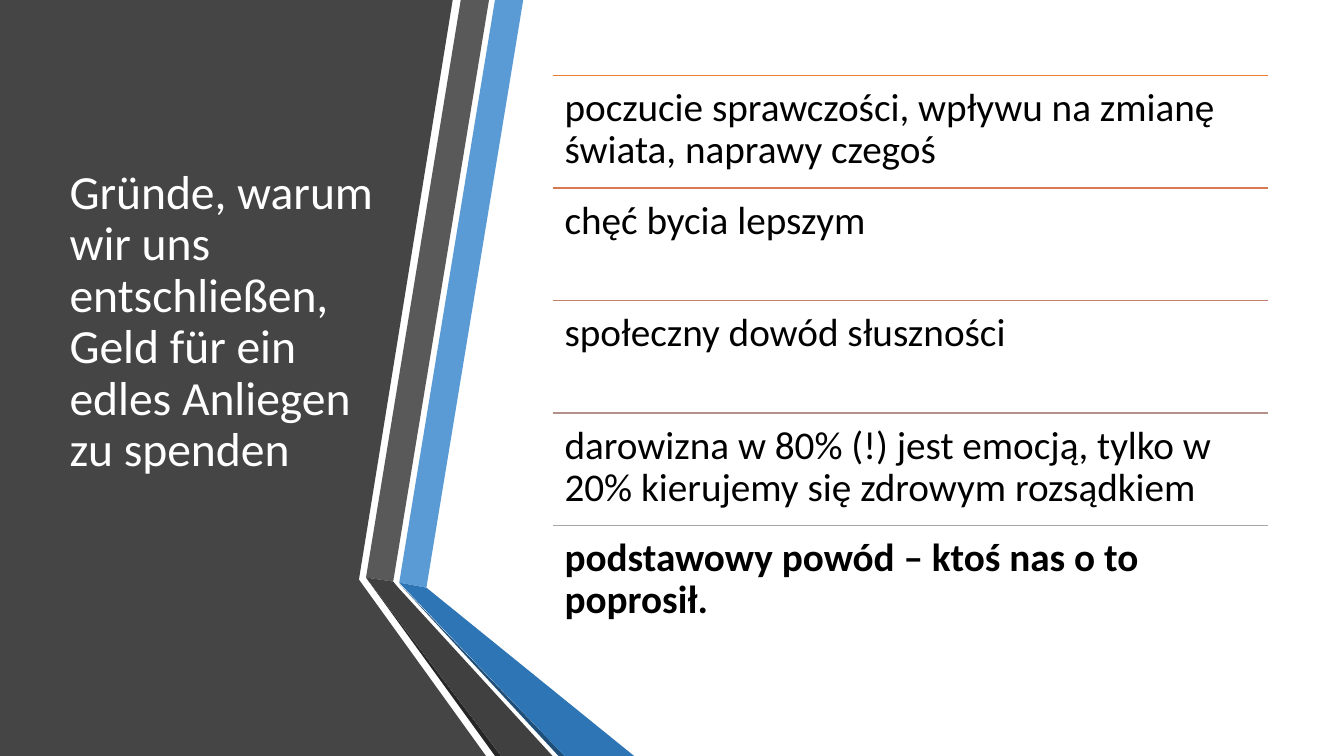
"""Build a slide with a folded-ribbon title panel and a ruled list of reasons."""
from dataclasses import dataclass

from lxml import etree
from pptx import Presentation
from pptx import util as u
from pptx.dml.color import RGBColor
from pptx.enum import shapes, text
from pptx.oxml.ns import qn
from pptx.slide import Slide
from pptx.text.text import TextFrame

FONT = "Calibri"
WHITE = RGBColor(0xFF, 0xFF, 0xFF)
BLACK = RGBColor(0x00, 0x00, 0x00)
PANEL_GRAY = RGBColor(0x45, 0x45, 0x45)
RIBBON_BLUE = RGBColor(0x5B, 0x9B, 0xD5)
RIBBON_GRAY = RGBColor(0x59, 0x59, 0x59)
EDGE_GRAY = RGBColor(0x26, 0x26, 0x26)
EDGE_BLUE = RGBColor(0x1F, 0x4E, 0x79)
FOLD_BLUE = RGBColor(0x2E, 0x75, 0xB6)
FOLD_GRAY = RGBColor(0x40, 0x40, 0x40)
RULE_ORANGE = RGBColor(0xED, 0x7D, 0x31)
RULE_COPPER = RGBColor(0xD8, 0x7A, 0x51)
RULE_ROSE = RGBColor(0xC4, 0x81, 0x70)
RULE_MAUVE = RGBColor(0xB4, 0x90, 0x8B)
RULE_GRAY = RGBColor(0xA5, 0xA5, 0xA5)

LIST_LEFT, LIST_TOP, LIST_WIDTH, LIST_HEIGHT = 5.48, 0.75, 7.1, 5.58
LIST_INSET = 0.12


@dataclass(frozen=True)
class Facet:
    color: RGBColor
    points: tuple[tuple[float, float], ...]


@dataclass(frozen=True)
class Reason:
    wording: str
    rule_color: RGBColor
    bold: bool = False


FACETS = (
    Facet(PANEL_GRAY, ((0, 0), (4.49, 0), (3.56, 5.75), (4.82, 7.5), (0, 7.5))),
    Facet(RIBBON_BLUE, ((3.96, 5.78), (4.23, 5.83), (5.19, 0), (4.91, 0))),
    Facet(RIBBON_GRAY, ((4.85, 0), (4.57, 0), (3.63, 5.73), (3.9, 5.77))),
    Facet(EDGE_GRAY, ((3.63, 5.73), (4.91, 7.5), (4.97, 7.5))),
    Facet(EDGE_BLUE, ((3.96, 5.79), (5.54, 7.5), (5.6, 7.5))),
    Facet(FOLD_BLUE, ((3.96, 5.78), (5.6, 7.5), (6.29, 7.5), (4.23, 5.83))),
    Facet(FOLD_GRAY, ((5.48, 7.5), (3.95, 5.83), (3.9, 5.77), (3.63, 5.73), (4.97, 7.5))),
)

REASONS = (
    Reason("poczucie sprawczości, wpływu na zmianę świata, naprawy czegoś", RULE_ORANGE),
    Reason("chęć bycia lepszym", RULE_COPPER),
    Reason("społeczny dowód słuszności", RULE_ROSE),
    Reason("darowizna w 80% (!) jest emocją, tylko w 20% kierujemy się zdrowym rozsądkiem", RULE_MAUVE),
    Reason("podstawowy powód – ktoś nas o to poprosił.", RULE_GRAY, bold=True),
)


def write_text(frame: TextFrame, wording: str, size: int, color: RGBColor, bold: bool = False) -> None:
    frame.word_wrap = True
    frame.auto_size = text.MSO_AUTO_SIZE.NONE
    paragraph = frame.paragraphs[0]
    paragraph.text = wording
    paragraph.alignment = text.PP_ALIGN.LEFT
    paragraph.line_spacing = 0.9
    paragraph.font.name = FONT
    paragraph.font.size = u.Pt(size)
    paragraph.font.bold = bold
    paragraph.font.color.rgb = color


def draw_facet(slide: Slide, facet: Facet) -> None:
    start, *others = [(u.Inches(x), u.Inches(y)) for x, y in facet.points]
    builder = slide.shapes.build_freeform(*start)
    builder.add_line_segments(others, close=True)
    shape = builder.convert_to_shape()
    shape.shadow.inherit = False
    shape.fill.solid()
    shape.fill.fore_color.rgb = facet.color
    shape.line.fill.background()


def place_title(slide: Slide, wording: str) -> None:
    title = slide.shapes.title
    title.left, title.top = u.Inches(0.59), u.Inches(0.75)
    title.width, title.height = u.Inches(3.25), u.Inches(5.58)
    frame = title.text_frame
    frame.vertical_anchor = text.MSO_ANCHOR.MIDDLE
    frame.margin_bottom = u.Inches(0.73)
    write_text(frame, wording, 34, WHITE)
    title.element.getparent().append(title.element)


def draw_reason(slide: Slide, reason: Reason, top: float, height: float) -> None:
    left, width = u.Inches(LIST_LEFT), u.Inches(LIST_WIDTH)
    rule = slide.shapes.add_connector(
        shapes.MSO_CONNECTOR.STRAIGHT, left, u.Inches(top), left + width, u.Inches(top)
    )
    rule.line.color.rgb = reason.rule_color
    rule.line.width = u.Pt(1)
    etree.SubElement(rule.element.spPr, qn("a:effectLst"))

    box = slide.shapes.add_textbox(left, u.Inches(top), width, u.Inches(height))
    frame = box.text_frame
    frame.margin_left = frame.margin_right = u.Inches(LIST_INSET)
    frame.margin_top = frame.margin_bottom = u.Inches(LIST_INSET)
    write_text(frame, reason.wording, 28, BLACK, reason.bold)


def main() -> None:
    presentation = Presentation()
    presentation.slide_width = u.Inches(13.33)
    presentation.slide_height = u.Inches(7.5)
    slide = presentation.slides.add_slide(presentation.slide_layouts.get_by_name("Title Only"))
    for facet in FACETS:
        draw_facet(slide, facet)
    place_title(slide, "Gründe, warum wir uns entschließen, Geld für ein edles Anliegen zu spenden")
    row_height = LIST_HEIGHT / len(REASONS)
    for row, reason in enumerate(REASONS):
        draw_reason(slide, reason, LIST_TOP + row * row_height, row_height)
    presentation.save("out.pptx")


if __name__ == "__main__":
    main()
